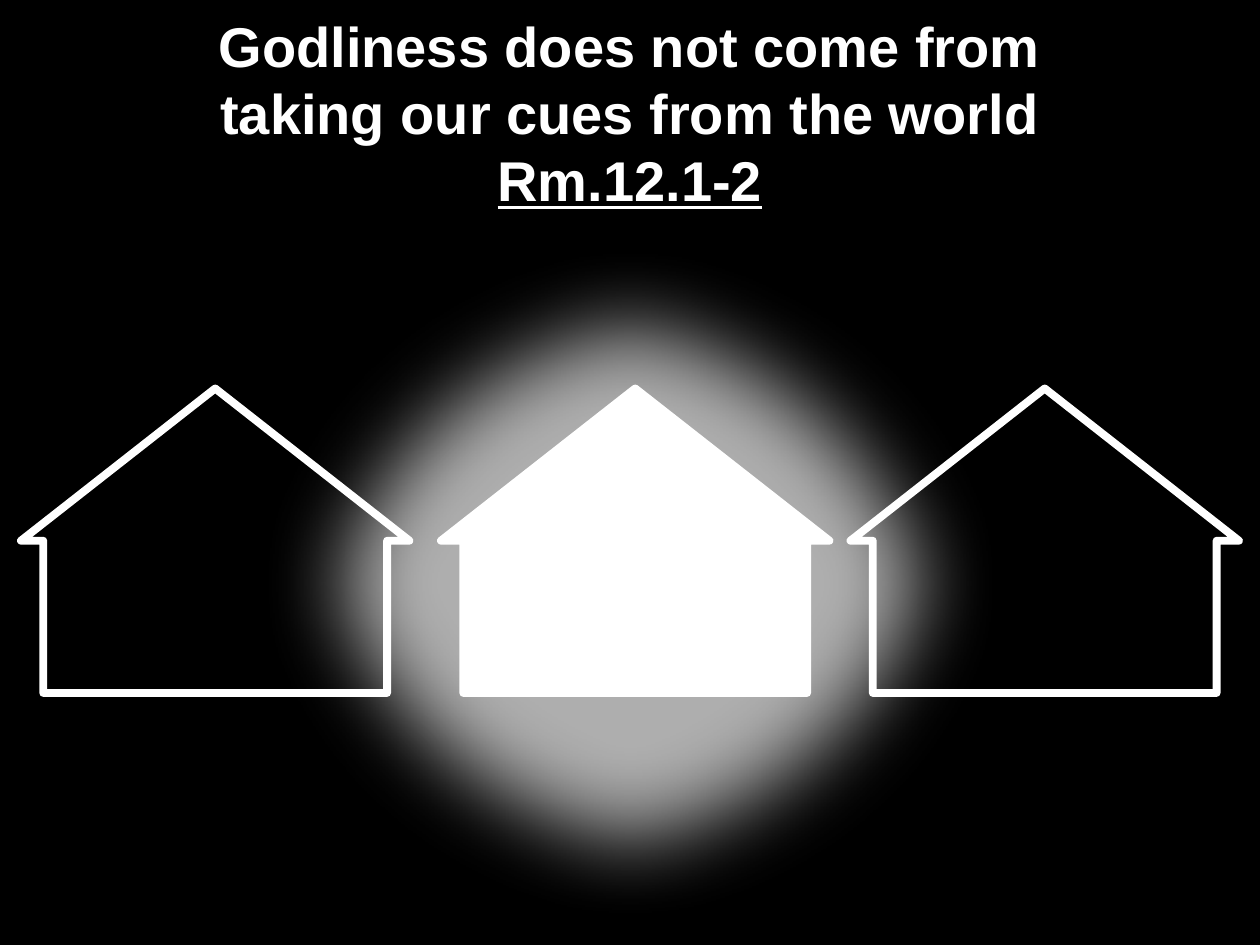
from lxml import etree
from pptx import Presentation
from pptx.dml.color import RGBColor
from pptx.enum.shapes import MSO_SHAPE
from pptx.enum.text import MSO_ANCHOR, PP_ALIGN
from pptx.oxml.ns import qn
from pptx.util import Pt

RECTANGLE, ELLIPSE, UP_ARROW = MSO_SHAPE.RECTANGLE, MSO_SHAPE.OVAL, MSO_SHAPE.UP_ARROW
TOP, CENTER = MSO_ANCHOR.TOP, PP_ALIGN.CENTER

TITLE = [
    ("Godliness does not come from", False),
    ("taking our cues from the world", False),
    ("Rm.12.1-2", True),
]
THEME = {
    "dark": RGBColor(0, 0, 0),
    "light": RGBColor(255, 255, 255),
    "font": "Arial",
    "title_size": Pt(32),
    "title_pitch": Pt(38.3),
    "house_line": 4.5,
    "glow_line": 0.75,
    "glow_opacity": 68,
    "glow_softness": Pt(50),
}
WIDTH, HEIGHT = 720, 540
HOUSE_TOP, HOUSE_WIDTH, HOUSE_HEIGHT = 222, 222, 174
SIDE_HOUSES = [12, 486]
CENTER_HOUSE = 252
GLOW = (138, 132, 444, 402)


def set_all(target, values):
    for name, value in values.items():
        setattr(target, name, value)


def add_figure(page, kind, frame, fill, line=None, line_width=0):
    shape = page.shapes.add_shape(kind, *map(Pt, frame))
    shape.shadow.inherit = False
    shape.fill.solid()
    shape.fill.fore_color.rgb = THEME[fill]
    if line:
        shape.line.color.rgb = THEME[line]
        shape.line.width = Pt(line_width)
    else:
        shape.line.fill.background()
    return shape


def add_house(page, left, fill):
    """Draw a house as a wide up arrow: the head is the roof, the shaft the walls."""
    frame = (left, HOUSE_TOP, HOUSE_WIDTH, HOUSE_HEIGHT)
    house = add_figure(page, UP_ARROW, frame, fill, "light", THEME["house_line"])
    house.adjustments[0] = 0.885
    house.adjustments[1] = 0.5
    etree.SubElement(house.line._get_or_add_ln(), qn("a:round"))


def add_glow(page):
    """Draw a translucent ellipse whose edge fades out."""
    glow = add_figure(page, ELLIPSE, GLOW, "light", "dark", THEME["glow_line"])
    properties = glow.element.spPr
    color = properties.find(qn("a:solidFill"))[0]
    etree.SubElement(color, qn("a:alpha"), val=str(THEME["glow_opacity"] * 1000))
    effects = properties.find(qn("a:effectLst"))
    etree.SubElement(effects, qn("a:softEdge"), rad=str(int(THEME["glow_softness"])))


def add_title(page):
    backdrop = add_figure(page, RECTANGLE, (0, 0, WIDTH, HEIGHT), "dark")
    set_all(backdrop.text_frame, {
        "word_wrap": True, "vertical_anchor": TOP, "margin_top": Pt(6.8)})
    para = backdrop.text_frame.paragraphs[0]
    set_all(para, {"alignment": CENTER, "line_spacing": THEME["title_pitch"]})
    for index, (text, underlined) in enumerate(TITLE):
        if index:
            para.add_line_break()
        span = para.add_run()
        span.text = text
        set_all(span.font, {
            "name": THEME["font"], "size": THEME["title_size"],
            "bold": True, "underline": underlined})
        span.font.color.rgb = THEME["light"]


def main():
    deck = Presentation()
    set_all(deck, {"slide_width": Pt(WIDTH), "slide_height": Pt(HEIGHT)})
    page = deck.slides.add_slide(deck.slide_layouts[6])
    add_title(page)
    for left in SIDE_HOUSES:
        add_house(page, left, "dark")
    add_glow(page)
    add_house(page, CENTER_HOUSE, "light")
    deck.save("out.pptx")


if __name__ == "__main__":
    main()
